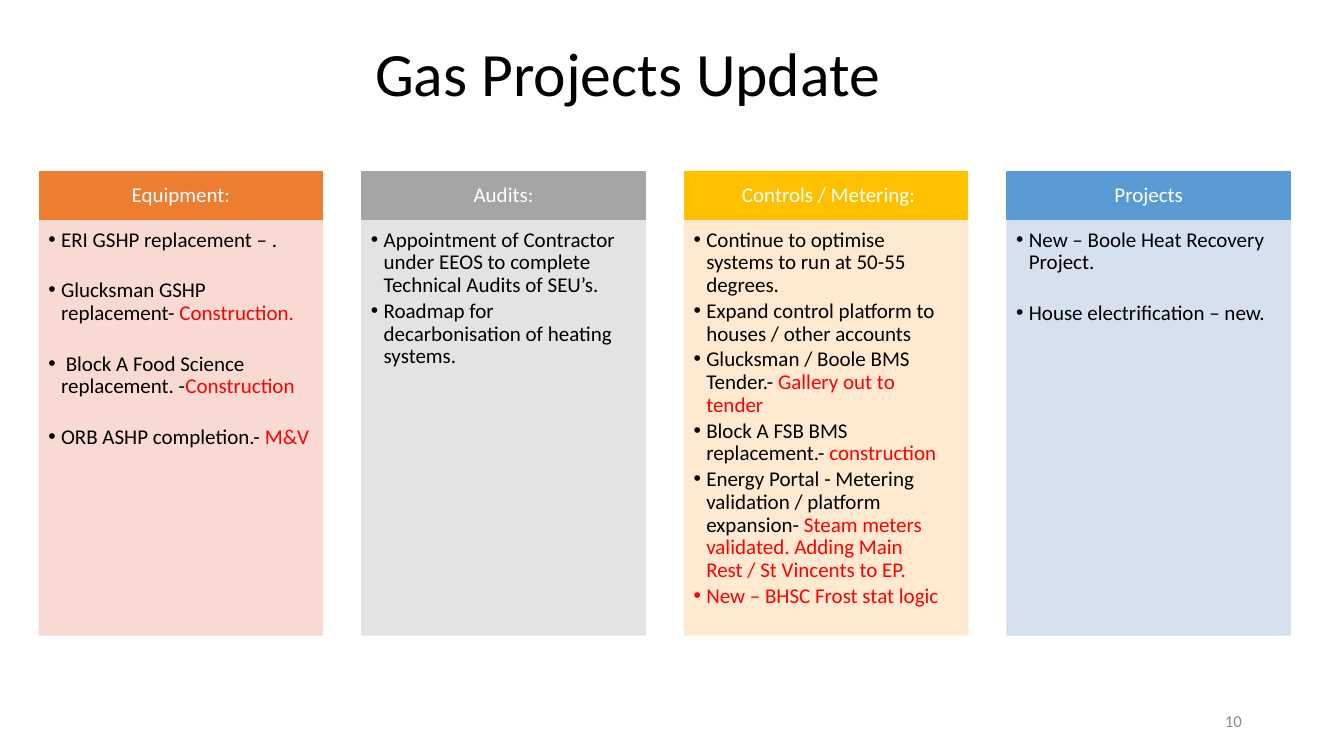
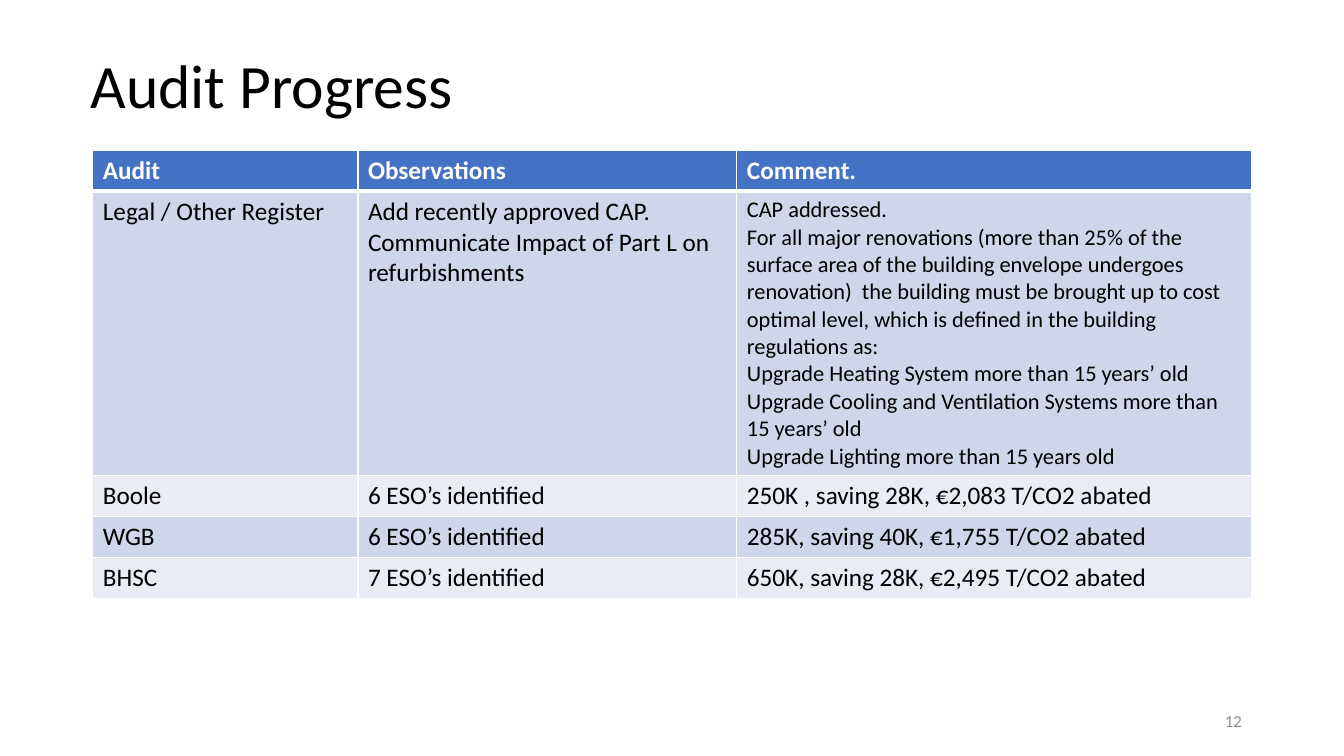
import pptx
import pptx.util
import pptx.dml.color
import pptx.enum.shapes
import pptx.enum.text
import pptx.oxml
import pptx.oxml.ns
from lxml import etree

Cm, Pt = pptx.util.Cm, pptx.util.Pt
ALIGN = pptx.enum.text.PP_ALIGN
ANCHOR = pptx.enum.text.MSO_ANCHOR
RECT = pptx.enum.shapes.MSO_SHAPE.RECTANGLE
qn = pptx.oxml.ns.qn

FONT = "Calibri"
BLACK, WHITE, RED, GREY = "000000", "FFFFFF", "FF0000", "8C8C8C"
BLUE, BANDS = "4472C4", ("CFD5EA", "E9EBF5")

COLUMNS = [
    ("Equipment:", "ED7D31", "F8D7CE", 20, [
        "ERI GSHP replacement – .",
        "Glucksman GSHP replacement- |Construction.",
        " Block A Food Science replacement. -|Construction",
        "ORB ASHP completion.- |M&V"]),
    ("Audits:", "A5A5A5", "E1E1E1", 2.25, [
        "Appointment of Contractor under EEOS to complete Technical Audits of SEU’s.",
        "Roadmap for decarbonisation of heating systems."]),
    (" Controls / Metering:", "FFC000", "FFE8CC", 2.25, [
        "Continue to optimise systems to run at 50-55 degrees.",
        "Expand control platform to houses / other accounts",
        "Glucksman / Boole BMS Tender.- |Gallery out to tender",
        "Block A FSB BMS replacement.- |construction",
        "Energy Portal - Metering validation / platform expansion- "
        "|Steam meters validated. Adding Main Rest / St Vincents to EP.",
        "|New – BHSC Frost stat logic"]),
    ("Projects", "5B9BD5", "D2DEEF", 20, [
        "New – Boole Heat Recovery Project.",
        "House electrification – new."]),
]

AUDITS = [
    ("Audit", "Observations", "Comment."),
    ("Legal / Other Register",
     "Add recently approved CAP.\n"
     "Communicate Impact of Part L on refurbishments",
     "CAP addressed.\n"
     "For all major renovations (more than 25% of the surface area of the "
     "building envelope undergoes renovation)  the building must be brought "
     "up to cost optimal level, which is defined in the building regulations as:\n"
     "Upgrade Heating System more than 15 years’ old\n"
     "Upgrade Cooling and Ventilation Systems more than 15 years’ old\n"
     "Upgrade Lighting more than 15 years old"),
    ("Boole", "6 ESO’s identified", "250K , saving 28K, €2,083 T/CO2 abated"),
    ("WGB", "6 ESO’s identified", "285K, saving 40K, €1,755 T/CO2 abated"),
    ("BHSC", "7 ESO’s identified", "650K, saving 28K, €2,495 T/CO2 abated"),
]


def rgb(code):
    return pptx.dml.color.RGBColor.from_string(code)


def bullet(para):
    props = para._p.get_or_add_pPr()
    props.set("marL", str(Cm(0.32)))
    props.set("indent", str(-Cm(0.32)))
    etree.SubElement(props, qn("a:buFont")).set("typeface", "Arial")
    etree.SubElement(props, qn("a:buChar")).set("char", "•")


def write(frame, lines, size=15, color=BLACK, bold=False, align=ALIGN.LEFT,
          space=1.0, after=0, dots=False):
    """Fill a frame, one paragraph a line; text after a | is red."""
    for i, line in enumerate(lines):
        para = frame.add_paragraph() if i else frame.paragraphs[0]
        para.alignment = align
        para.line_spacing = space
        para.space_before = Pt(0)
        para.space_after = Pt(after)
        if dots:
            bullet(para)
        for part, tint in zip(line.split("|"), (color, RED)):
            if part:
                run = para.add_run()
                run.text = part
                run.font.name = FONT
                run.font.size = Pt(size)
                run.font.bold = bold
                run.font.color.rgb = rgb(tint)


def setup(frame, anchor, inset=None):
    frame.word_wrap = True
    frame.auto_size = pptx.enum.text.MSO_AUTO_SIZE.NONE
    frame.vertical_anchor = anchor
    if inset:
        (frame.margin_left, frame.margin_top,
         frame.margin_right, frame.margin_bottom) = map(Cm, inset)


def panel(slide, box, color, alpha=100):
    shape = slide.shapes.add_shape(RECT, *map(Cm, box))
    shape.shadow.inherit = False
    shape.fill.solid()
    shape.fill.fore_color.rgb = rgb(color)
    shape.line.color.rgb = rgb(color)
    shape.line.width = Pt(1)
    if alpha < 100:
        for tint in shape._element.spPr.iter(qn("a:srgbClr")):
            etree.SubElement(tint, qn("a:alpha")).set("val", str(alpha * 1000))
    return shape.text_frame


def base(deck, title, box, align, number):
    """Add a slide with its title and page number."""
    slide = deck.slides.add_slide(deck.slide_layouts[5])
    head = slide.shapes.title
    head.left, head.top, head.width, head.height = map(Cm, box)
    setup(head.text_frame, ANCHOR.MIDDLE)
    write(head.text_frame, [title], size=44, align=align, space=0.9)
    foot = slide.shapes.add_textbox(Cm(23.93), Cm(17.65), Cm(7.62), Cm(1.02))
    setup(foot.text_frame, ANCHOR.MIDDLE)
    write(foot.text_frame, [number], size=12, color=GREY, align=ALIGN.RIGHT)
    return slide


def column(slide, box, name, dark, light, after, items):
    left, top, width, height = box
    bar = 1.2
    frame = panel(slide, (left, top + bar, width, height - bar), light, 90)
    setup(frame, ANCHOR.TOP, (0.23, 0.23, 0.3, 0.33))
    write(frame, items, space=0.9, after=after, dots=True)
    frame = panel(slide, (left, top, width, bar), dark)
    setup(frame, ANCHOR.MIDDLE, (0.3, 0.18, 0.3, 0.18))
    write(frame, [name], color=WHITE, align=ALIGN.CENTER, space=0.9)


def border(cell, row):
    """Draw white edges, thick between the header and the first row."""
    props = cell._tc.get_or_add_tcPr()
    thick = {(0, "lnB"), (1, "lnT")}
    for side in ("lnL", "lnR", "lnT", "lnB"):
        edge = etree.SubElement(props, qn("a:" + side))
        edge.set("w", str(Pt(3 if (row, side) in thick else 1)))
        fill = etree.SubElement(edge, qn("a:solidFill"))
        etree.SubElement(fill, qn("a:srgbClr")).set("val", WHITE)


def grid(slide, left, top, widths, heights, rows):
    table = slide.shapes.add_table(
        len(rows), len(widths), Cm(left), Cm(top),
        Cm(sum(widths)), Cm(sum(heights))).table
    for col, width in zip(table.columns, widths):
        col.width = Cm(width)
    for r, texts in enumerate(rows):
        table.rows[r].height = Cm(heights[r])
        for c, text in enumerate(texts):
            cell = table.cell(r, c)
            border(cell, r)
            cell.fill.solid()
            cell.fill.fore_color.rgb = rgb(BANDS[(r - 1) % 2] if r else BLUE)
            lines = text.split("\n")
            write(cell.text_frame, lines, size=16 if len(lines) > 2 else 18,
                  color=BLACK if r else WHITE, bold=r == 0)


def projects(deck):
    slide = base(deck, "Gas Projects Update", (2.44, 0.64, 26.77, 2.59),
                 ALIGN.CENTER, "10")
    for i, data in enumerate(COLUMNS):
        column(slide, (0.99 + 8.13 * i, 4.34, 7.14, 11.66), *data)


def audits(deck):
    slide = base(deck, "Audit Progress", (2.03, 0.38, 29.21, 3.68),
                 ALIGN.LEFT, "12")
    grid(slide, 2.34, 3.78, (6.68, 9.55, 12.98),
         (1.04, 7.14, 1.04, 1.04, 1.04), AUDITS)


def main():
    deck = pptx.Presentation()
    deck.slide_width, deck.slide_height = Cm(33.87), Cm(19.05)
    projects(deck)
    audits(deck)
    deck.save("out.pptx")


if __name__ == "__main__":
    main()
